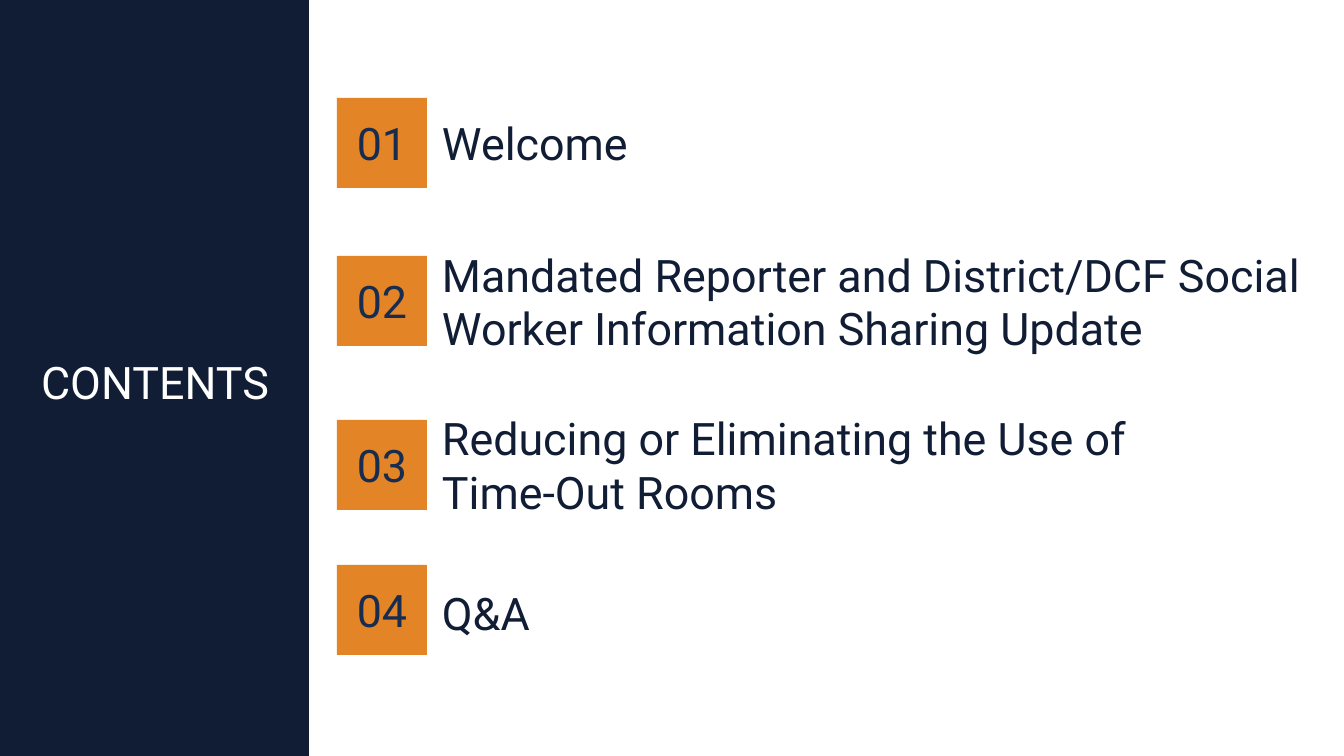
"""Builds a contents slide with four numbered agenda items beside a dark panel."""
from pptx import Presentation
from pptx import util as u
from pptx.dml.color import RGBColor
from pptx.enum import shapes, text

PX = 914400 / 100.8
NAVY = "101D35"


def px(*lengths):
    return [u.Emu(round(length * PX)) for length in lengths]


def write(shape, wording, color, align):
    frame = shape.text_frame
    frame.text = wording
    frame.word_wrap = True
    frame.auto_size = text.MSO_AUTO_SIZE.NONE
    frame.vertical_anchor = text.MSO_ANCHOR.MIDDLE
    for para in frame.paragraphs:
        para.alignment = align
        para.font.name = "Roboto"
        para.font.size = u.Pt(32)
        para.font.color.rgb = RGBColor.from_string(color)


deck = Presentation()
deck.slide_width, deck.slide_height = px(1344, 756)
page = deck.slides.add_slide(deck.slide_layouts[5])

panel = page.shapes.add_shape(shapes.MSO_SHAPE.RECTANGLE, *px(0, 0, 309, 756))
panel.shadow.inherit = False
panel.fill.solid()
panel.fill.fore_color.rgb = RGBColor.from_string(NAVY)
panel.line.fill.background()

items = [
    (98, 98, "Welcome"),
    (256, 256, "Mandated Reporter and District/DCF Social Worker Information Sharing Update"),
    (420, 420, "Reducing or Eliminating the Use of\nTime-Out Rooms"),
    (565, 568, "Q&A"),
]
for number, (top, label_top, wording) in enumerate(items, 1):
    group = page.shapes.add_group_shape()
    badge = group.shapes.add_shape(shapes.MSO_SHAPE.RECTANGLE, *px(337, top, 90, 90))
    badge.shadow.inherit = False
    badge.fill.solid()
    badge.fill.fore_color.rgb = RGBColor.from_string("E38526")
    badge.line.fill.background()
    write(badge, f"{number:02d}", "182C50", text.PP_ALIGN.CENTER)
    label = group.shapes.add_textbox(*px(432, label_top, 880, 90))
    write(label, wording, NAVY, text.PP_ALIGN.LEFT)

title = page.shapes.title
title.left, title.top, title.width, title.height = px(31, 329, 282, 113)
write(title, "CONTENTS", "FFFFFF", text.PP_ALIGN.LEFT)
title.text_frame.paragraphs[0].line_spacing = 0.9
page.shapes._spTree.append(title._element)

deck.save("out.pptx")
